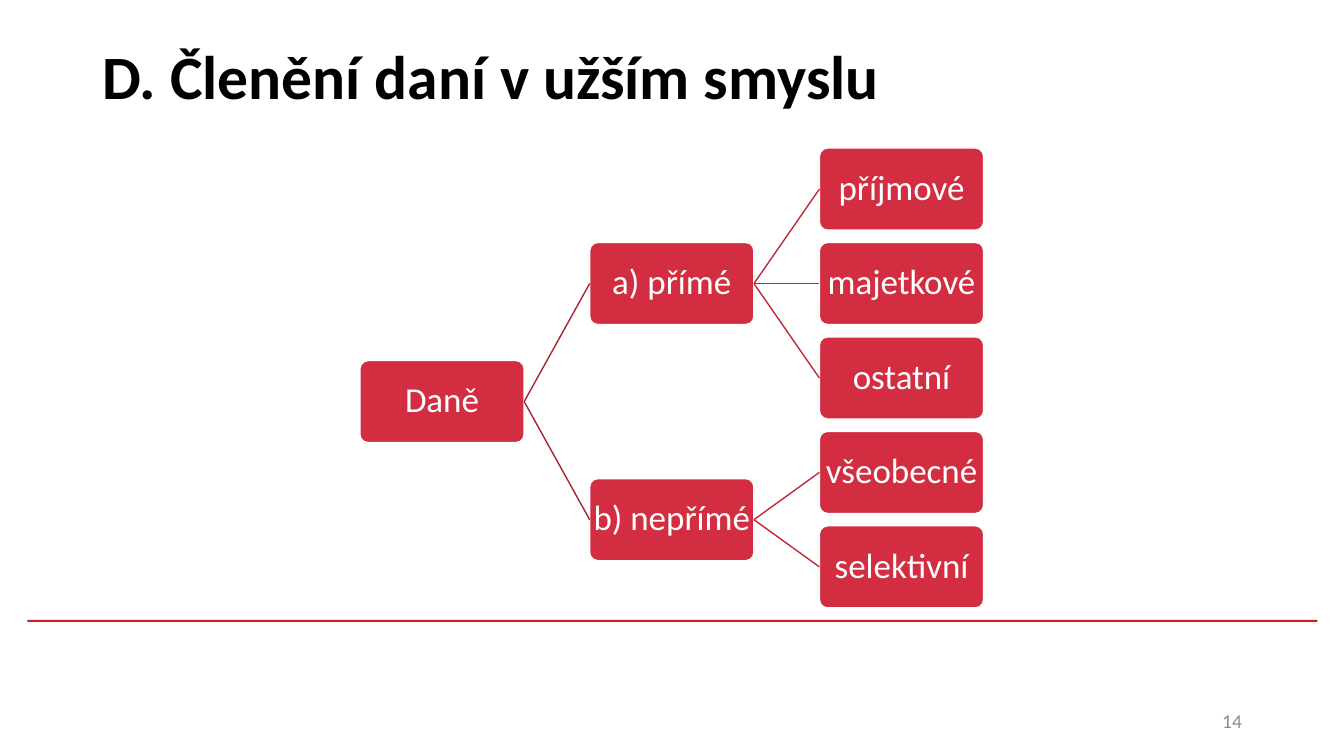
"""Build a slide with a tree of tax types."""
import pptx
import pptx.dml.color
import pptx.enum.shapes
import pptx.enum.text
import pptx.oxml
import pptx.util

Cm = pptx.util.Cm
Pt = pptx.util.Pt
Shape = pptx.enum.shapes.MSO_SHAPE
Align = pptx.enum.text.PP_ALIGN


def paint(color, code):
    color.rgb = pptx.dml.color.RGBColor.from_string(code)


def write(shape, text, size, code, align, bold=False):
    frame = shape.text_frame
    frame.word_wrap = True
    frame.vertical_anchor = pptx.enum.text.MSO_ANCHOR.MIDDLE
    para = frame.paragraphs[0]
    para.text = text
    para.alignment = align
    para.font.name = "Calibri"
    para.font.size = Pt(size)
    para.font.bold = bold
    paint(para.font.color, code)
    return frame


deck = pptx.Presentation()
deck.slide_width = Cm(33.87)
deck.slide_height = Cm(19.05)
slide = deck.slides.add_slide(deck.slide_layouts[6])
shapes = slide.shapes

rule = shapes.add_shape(Shape.RECTANGLE, Cm(0.69), Cm(15.62), Cm(32.51), Cm(0.05))
rule.shadow.inherit = False
rule.fill.solid()
paint(rule.fill.fore_color, "CD1F21")
rule.line.fill.background()

title = shapes.add_textbox(Cm(2.33), Cm(0.05), Cm(29.21), Cm(3.68))
write(title, "D. Členění daní v užším smyslu", 44, "000000", Align.LEFT, True)

left, top = 9.07, 3.73
width, height = 4.14, 2.07
col_step, row_step = 5.79, 2.38

# name, column, row, parent
nodes = [
    ("Daně", 0, 2.25, None),
    ("a) přímé", 1, 1, "Daně"),
    ("příjmové", 2, 0, "a) přímé"),
    ("majetkové", 2, 1, "a) přímé"),
    ("ostatní", 2, 2, "a) přímé"),
    ("b) nepřímé", 1, 3.5, "Daně"),
    ("všeobecné", 2, 3, "b) nepřímé"),
    ("selektivní", 2, 4, "b) nepřímé"),
]
line_codes = {1: "A82433", 2: "BF293A"}
boxes = {}

for name, col, row, parent in nodes:
    box = shapes.add_shape(
        Shape.ROUNDED_RECTANGLE,
        Cm(left + col * col_step), Cm(top + row * row_step), Cm(width), Cm(height),
    )
    box.adjustments[0] = 0.1
    box.shadow.inherit = False
    box.fill.solid()
    paint(box.fill.fore_color, "D22D40")
    paint(box.line.color, "FFFFFF")
    box.line.width = Pt(1)
    frame = write(box, name, 25, "FFFFFF", Align.CENTER)
    frame.margin_left = frame.margin_right = Cm(0.03)
    frame.margin_top = frame.margin_bottom = Cm(0.03)
    frame.paragraphs[0].line_spacing = 0.9
    boxes[name] = box

    if parent:
        link = shapes.add_connector(pptx.enum.shapes.MSO_CONNECTOR.STRAIGHT, 0, 0, 0, 0)
        link.begin_connect(boxes[parent], 3)
        link.end_connect(box, 1)
        paint(link.line.color, line_codes[col])
        link.line.width = Pt(1)
        props = link.element.spPr
        props.append(pptx.oxml.parse_xml(
            '<a:effectLst xmlns:a="http://schemas.openxmlformats.org/drawingml/2006/main"/>'
        ))

number = shapes.add_textbox(Cm(23.93), Cm(17.65), Cm(7.62), Cm(1.02))
write(number, "14", 14, "8C8C8C", Align.RIGHT)

deck.save("out.pptx")
